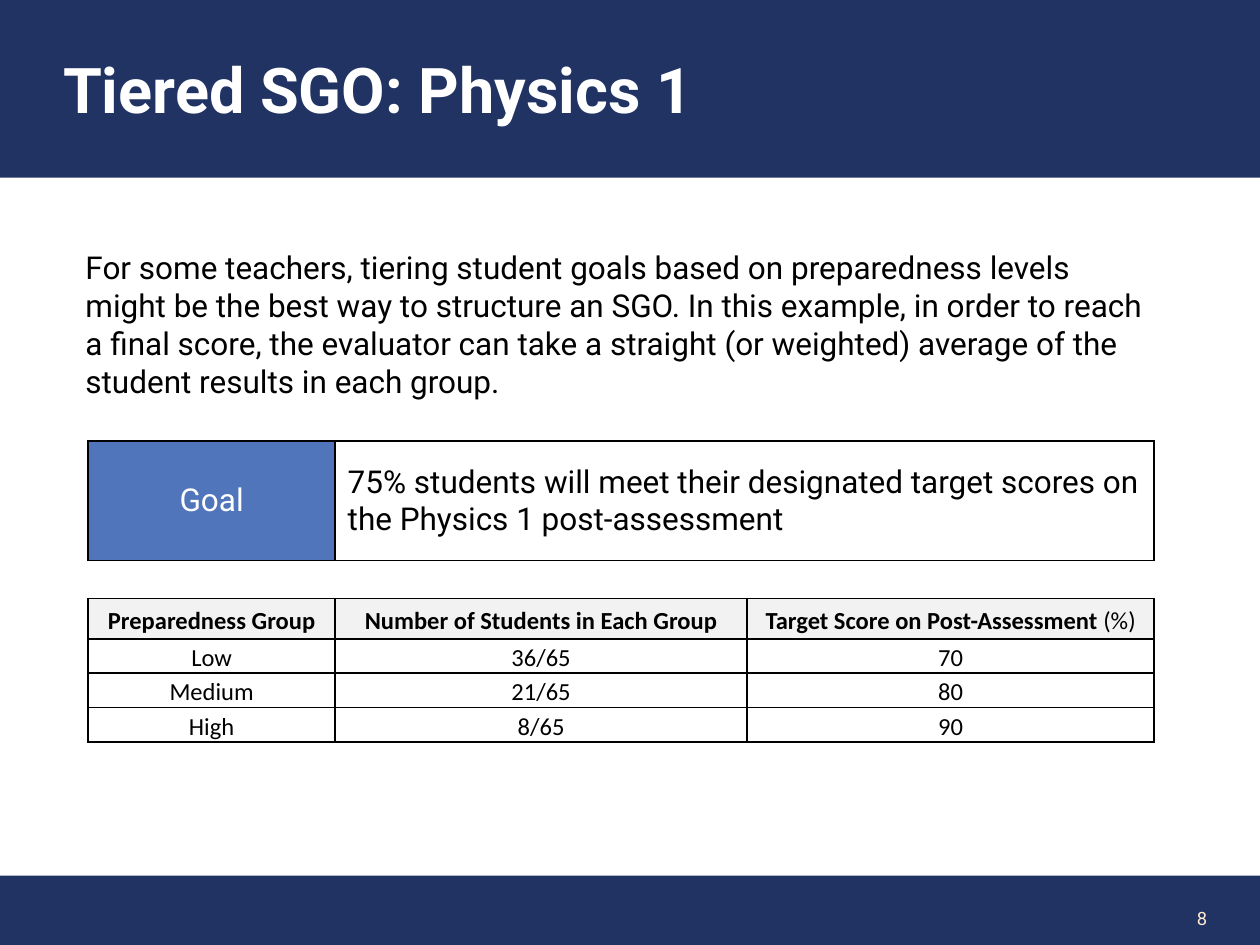
from dataclasses import dataclass

from lxml import etree
from pptx import Presentation
from pptx.dml.color import RGBColor
from pptx.enum.shapes import MSO_SHAPE
from pptx.enum.text import MSO_ANCHOR, MSO_AUTO_SIZE, PP_ALIGN
from pptx.oxml.ns import qn
from pptx.util import Inches, Pt

LEFT, CENTER, RIGHT = PP_ALIGN.LEFT, PP_ALIGN.CENTER, PP_ALIGN.RIGHT
TOP, MIDDLE = MSO_ANCHOR.TOP, MSO_ANCHOR.MIDDLE
RECTANGLE = MSO_SHAPE.RECTANGLE
NO_AUTOFIT = MSO_AUTO_SIZE.NONE
GROW_TO_FIT = MSO_AUTO_SIZE.SHAPE_TO_FIT_TEXT
TITLE_ONLY = 5


@dataclass(frozen=True)
class Theme:
    navy: str = "213363"
    blue: str = "5075BB"
    gray: str = "F2F2F2"
    white: str = "FFFFFF"
    black: str = "000000"
    cream: str = "FEEBD0"
    main_font: str = "Roboto"
    table_font: str = "Calibri"
    title_size: float = 36
    body_size: float = 18
    table_size: float = 14
    number_size: float = 10.5
    border_width: float = 1


class SlideBuilder:
    def __init__(self, slide, theme):
        self.slide = slide
        self.theme = theme

    def fill(self, target, color):
        target.fill.solid()
        target.fill.fore_color.rgb = RGBColor.from_string(color)

    def style(self, paragraph, size, color, font=None, bold=False, align=LEFT):
        paragraph.alignment = align
        for run in paragraph.runs:
            run.font.name = font or self.theme.main_font
            run.font.size = Pt(size)
            run.font.bold = bold
            run.font.color.rgb = RGBColor.from_string(color)

    def title(self, text, left, top, width, height):
        title = self.slide.shapes.title
        title.left, title.top = Inches(left), Inches(top)
        title.width, title.height = Inches(width), Inches(height)
        self.fill(title, self.theme.navy)
        frame = title.text_frame
        frame.text = text
        frame.auto_size = NO_AUTOFIT
        frame.vertical_anchor = MIDDLE
        frame.margin_left = Inches(0.5)
        self.style(frame.paragraphs[0], self.theme.title_size,
                   self.theme.white, bold=True)

    def band(self, left, top, width, height):
        band = self.slide.shapes.add_shape(
            RECTANGLE, Inches(left), Inches(top), Inches(width), Inches(height))
        band.shadow.inherit = False
        self.fill(band, self.theme.navy)
        band.line.fill.background()

    def text(self, text, left, top, width, height, size, color,
             align=LEFT, anchor=TOP, auto_size=NO_AUTOFIT):
        box = self.slide.shapes.add_textbox(
            Inches(left), Inches(top), Inches(width), Inches(height))
        frame = box.text_frame
        frame.text = text
        frame.word_wrap = True
        frame.auto_size = auto_size
        frame.vertical_anchor = anchor
        self.style(frame.paragraphs[0], size, color, align=align)

    def table(self, left, top, columns, rows):
        """Add an unbanded table with the given column widths and row heights."""
        frame = self.slide.shapes.add_table(
            len(rows), len(columns), Inches(left), Inches(top),
            Inches(sum(columns)), Inches(sum(rows)))
        table = frame.table
        table.first_row = table.horz_banding = False
        for column, width in zip(table.columns, columns):
            column.width = Inches(width)
        for row, height in zip(table.rows, rows):
            row.height = Inches(height)
        return table

    def cell(self, cell, text, size, color, fill=None, anchor=MIDDLE, **style):
        cell.text = text
        cell.vertical_anchor = anchor
        self.borders(cell)
        if fill:
            self.fill(cell, fill)
        else:
            cell.fill.background()
        paragraph = cell.text_frame.paragraphs[0]
        self.style(paragraph, size, color, **style)
        return paragraph

    def data_cell(self, cell, text, header):
        """Format a compact centred cell; headers are bold on gray."""
        cell.margin_left = cell.margin_right = Inches(0.07)
        cell.margin_top = cell.margin_bottom = 0
        paragraph = self.cell(
            cell, text, self.theme.table_size, self.theme.black,
            fill=self.theme.gray if header else None,
            anchor=MIDDLE if header else TOP,
            font=self.theme.table_font, bold=header, align=CENTER)
        paragraph.line_spacing = 1.15
        if not header:
            paragraph.space_after = Pt(10)
        return paragraph

    def borders(self, cell):
        properties = cell._tc.get_or_add_tcPr()
        for side in ("a:lnL", "a:lnR", "a:lnT", "a:lnB"):
            line = etree.SubElement(properties, qn(side),
                                    w=str(Pt(self.theme.border_width)))
            solid = etree.SubElement(line, qn("a:solidFill"))
            etree.SubElement(solid, qn("a:srgbClr"), val=self.theme.black)


def main():
    presentation = Presentation()
    presentation.slide_width, presentation.slide_height = Inches(10), Inches(7.5)
    slide = presentation.slides.add_slide(presentation.slide_layouts[TITLE_ONLY])
    theme = Theme()
    builder = SlideBuilder(slide, theme)

    # Footer and title bands
    builder.band(0, 6.95, 10.02, 0.59)
    builder.text("8", 8.22, 7.09, 1.46, 0.4, theme.number_size, theme.cream,
                 align=RIGHT, anchor=MIDDLE)
    builder.title("Tiered SGO: Physics 1", 0, 0, 10, 1.41)

    # Target scores by preparedness group
    groups = [
        ("Preparedness Group", "Number of Students in Each Group",
         "Target Score on Post-Assessment "),
        ("Low", "36/65", "70"),
        ("Medium", "21/65", "80"),
        ("High", "8/65", "90"),
    ]
    scores = builder.table(0.7, 4.75, [1.96, 3.27, 3.23], [0.32] + [0.27] * 3)
    for row, values in enumerate(groups):
        for column, value in enumerate(values):
            builder.data_cell(scores.cell(row, column), value, header=row == 0)

    # The unit in the last heading is not bold
    heading = scores.cell(0, 2).text_frame.paragraphs[0]
    heading.add_run().text = "(%)"
    builder.style(heading, theme.table_size, theme.black,
                  font=theme.table_font, bold=True, align=CENTER)
    heading.runs[-1].font.bold = False

    # Goal statement
    goal = builder.table(0.7, 3.5, [1.96, 6.5], [0.95])
    builder.cell(goal.cell(0, 0), "Goal", theme.body_size, theme.white,
                 fill=theme.blue, align=CENTER)
    builder.cell(goal.cell(0, 1),
                 "75% students will meet their designated target scores on "
                 "the Physics 1 post-assessment",
                 theme.body_size, theme.black, fill=theme.white)

    # Introduction
    builder.text(
        "For some teachers, tiering student goals based on preparedness levels "
        "might be the best way to structure an SGO. In this example, in order "
        "to reach a final score, the evaluator can take a straight (or weighted) "
        "average of the student results in each group.",
        0.58, 1.92, 8.61, 1.31, theme.body_size, theme.black,
        auto_size=GROW_TO_FIT)

    presentation.save("out.pptx")


if __name__ == "__main__":
    main()
